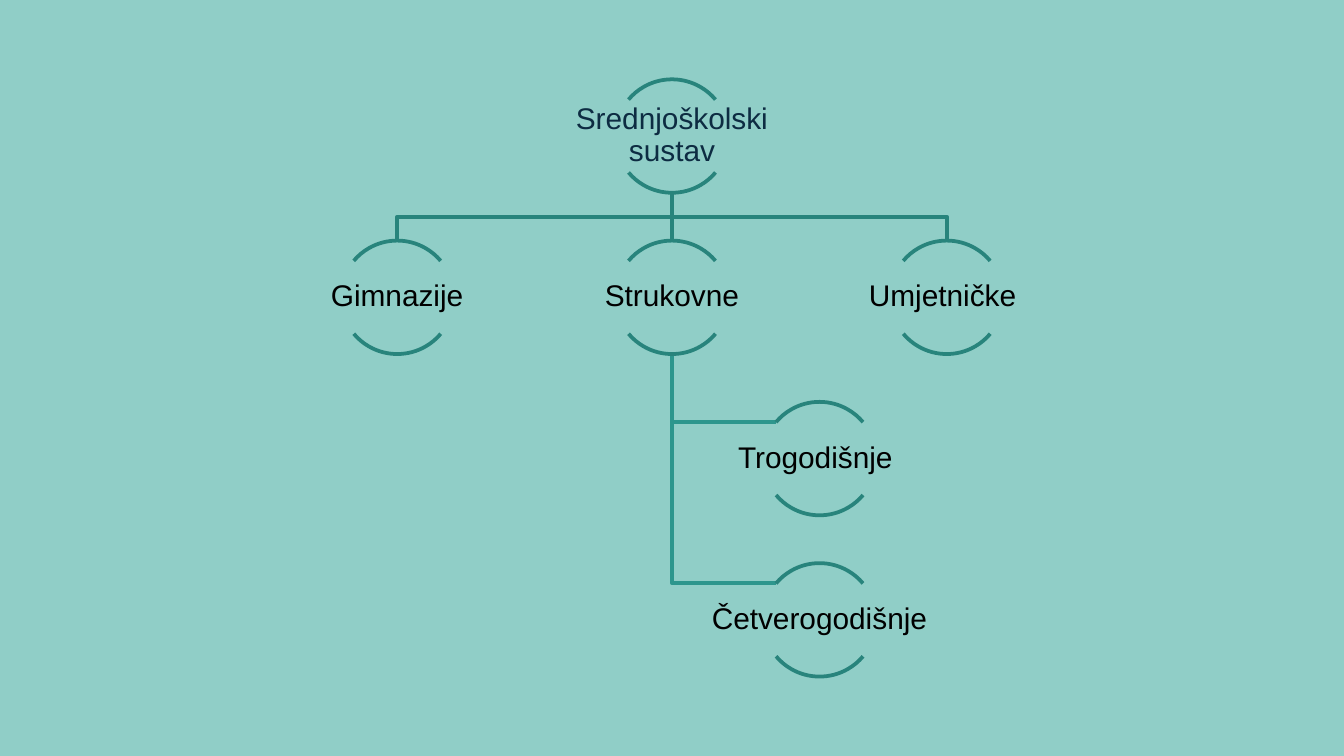
from dataclasses import dataclass
from math import cos, radians, sin

from pptx import Presentation
from pptx.dml.color import RGBColor as RGB
from pptx.enum.shapes import MSO_CONNECTOR as Link, MSO_SHAPE as Shape
from pptx.enum.text import MSO_ANCHOR as Anchor, PP_ALIGN as Align
from pptx.oxml.ns import qn
from pptx.util import Pt


@dataclass(frozen=True)
class Theme:
    back: RGB = RGB(0x90, 0xCE, 0xC7)
    ring: RGB = RGB(0x28, 0x84, 0x7C)
    branch: RGB = RGB(0x2D, 0x96, 0x8D)
    title: RGB = RGB(0x0D, 0x2C, 0x42)
    ink: RGB = RGB(0, 0, 0)
    font: str = "Arial"
    size: float = 16
    stroke: float = 2


THEME = Theme()
TILT = radians(40)
ARCS = ((132, 192), (24, 84))


@dataclass(frozen=True)
class Ring:
    mid: float
    top: float
    size: float

    @property
    def base(self):
        return self.top + self.size

    @property
    def inset(self):
        return self.size * (1 - sin(TILT)) / 2

    @property
    def tip(self):
        return self.mid - self.size * cos(TILT) / 2, self.top + self.inset


def style(shape, color):
    shape.line.color.rgb = color
    shape.line.width = Pt(THEME.stroke)


def add_text(slide, text, box, *, color, size=THEME.size, font=THEME.font):
    frame = slide.shapes.add_textbox(*map(Pt, box)).text_frame
    frame.word_wrap = True
    frame.vertical_anchor = Anchor.MIDDLE
    frame.margin_left = frame.margin_right = Pt(0.8)
    frame.margin_top = frame.margin_bottom = Pt(0.8)
    para = frame.paragraphs[0]
    para.alignment = Align.CENTER
    para.line_spacing = 0.9
    run = para.add_run()
    run.text = text
    run.font.name = font
    run.font.size = Pt(size)
    run.font.color.rgb = color


def add_path(slide, points, color):
    spots = [(Pt(x), Pt(y)) for x, y in points]
    pen = slide.shapes.build_freeform(*spots[0], scale=1.0)
    pen.add_line_segments(spots[1:], close=False)
    shape = pen.convert_to_shape()
    shape.shadow.inherit = False
    shape.fill.background()
    style(shape, color)


def add_stem(slide, x, top, end, color):
    line = slide.shapes.add_connector(Link.STRAIGHT, Pt(x), Pt(top), Pt(x), Pt(end))
    style(line, color)
    props = line._element.spPr
    props.append(props.makeelement(qn("a:effectLst"), {}))


def add_node(slide, text, ring, color):
    left = ring.mid - ring.size / 2
    for start, end in ARCS:
        arc = slide.shapes.add_shape(
            Shape.ARC, Pt(left), Pt(ring.top), Pt(ring.size), Pt(ring.size))
        arc.shadow.inherit = False
        arc.fill.background()
        arc.adjustments[0] = start
        arc.adjustments[1] = end
        style(arc, THEME.ring)
    box = (ring.mid - ring.size, ring.top + ring.inset,
           2 * ring.size, ring.size * sin(TILT))
    add_text(slide, text, box, color=color)


def add_tree(slide, box, root, kinds, years):
    left, top, width, height = box
    size = height * 0.19
    step = (height - size) / 3
    mid = left + width / 2
    gap = (width - 2 * size) / 2
    head = Ring(mid, top, size)
    row = [Ring(mid + i * gap, top + step, size) for i in (-1, 0, 1)]
    side = [Ring(mid + 1.3 * size, top + i * step, size) for i in (2, 3)]

    bus = (head.base + row[0].top) / 2
    for ring in (row[0], row[2]):
        add_path(slide, [(mid, head.base), (mid, bus), (ring.mid, bus),
                         (ring.mid, ring.top)], THEME.ring)
    for ring in side:
        add_path(slide, [(mid, row[1].base), (mid, ring.tip[1]), ring.tip],
                 THEME.branch)
    add_stem(slide, mid, head.base, row[1].top, THEME.ring)

    add_node(slide, root, head, THEME.title)
    for text, ring in zip(kinds + years, row + side):
        add_node(slide, text, ring, THEME.ink)


def main():
    deck = Presentation()
    deck.slide_width, deck.slide_height = Pt(720), Pt(405)
    slide = deck.slides.add_slide(deck.slide_layouts[6])
    fill = slide.background.fill
    fill.solid()
    fill.fore_color.rgb = THEME.back
    add_tree(slide, (152, 42.5, 416, 320), "Srednjoškolski sustav",
             ["Gimnazije", "Strukovne", "Umjetničke "],
             ["Trogodišnje ", "Četverogodišnje"])
    deck.save("out.pptx")


if __name__ == "__main__":
    main()
